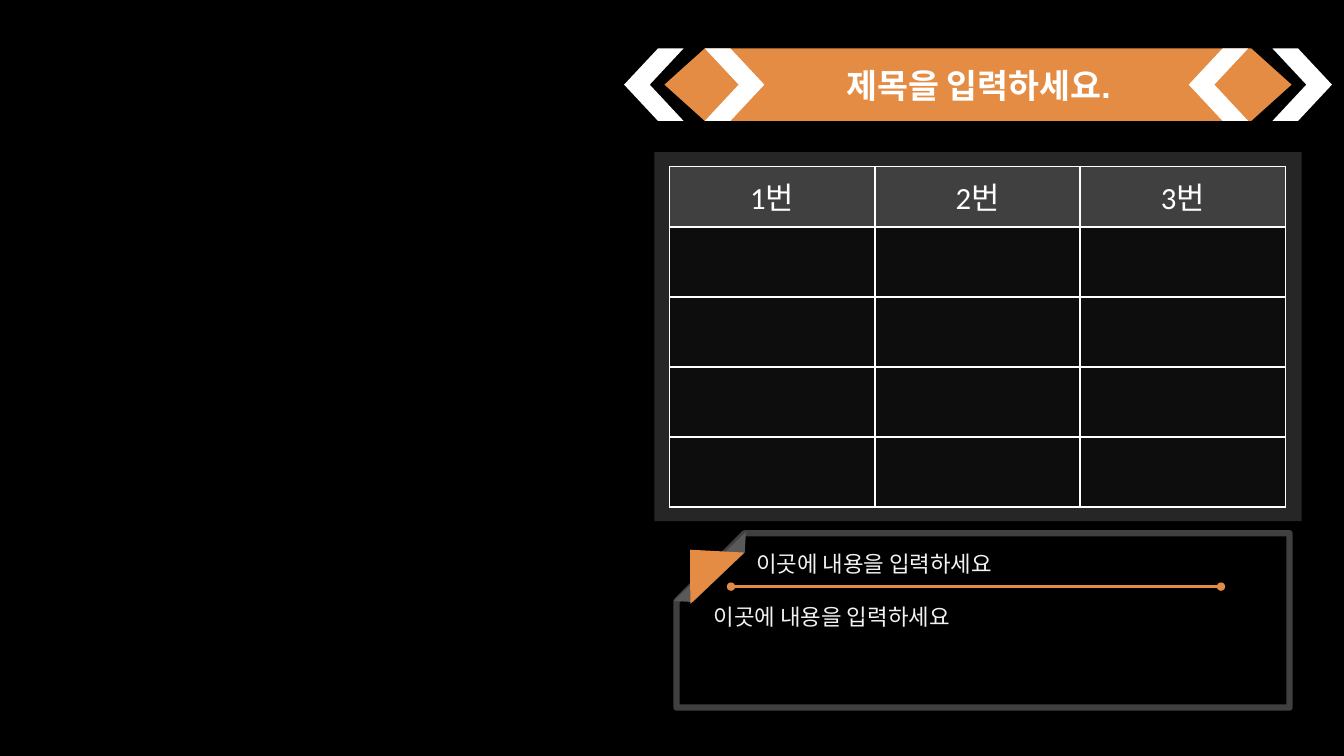
from lxml import etree
from pptx import Presentation
from pptx.dml.color import RGBColor
from pptx.enum import shapes, text
from pptx.oxml.ns import qn
from pptx.util import Inches, Pt

ORANGE, WHITE, BLACK, GRAY = "E48C44", "FFFFFF", "000000", "404040"
MS = shapes.MSO_SHAPE


def write(tf, words, size, color=WHITE, font="Calibri", bold=False, align=None):
    p = tf.paragraphs[0]
    p.alignment = align
    r = p.add_run()
    r.text = words
    r.font.size, r.font.name, r.font.bold = Pt(size), font, bold
    r.font.color.rgb = RGBColor.from_string(color)


def style(sp, fill=None, line=None, width=0):
    sp.shadow.inherit = False
    if fill:
        sp.fill.solid()
        sp.fill.fore_color.rgb = RGBColor.from_string(fill)
    else:
        sp.fill.background()
    if line:
        sp.line.color.rgb = RGBColor.from_string(line)
        sp.line.width = Pt(width)
    else:
        sp.line.fill.background()


prs = Presentation()
prs.slide_width, prs.slide_height = Inches(13.33), Inches(7.5)
s = prs.slides.add_slide(prs.slide_layouts[6])
s.background.fill.solid()
s.background.fill.fore_color.rgb = RGBColor.from_string(BLACK)

# Table on its panel
panel = s.shapes.add_shape(MS.RECTANGLE, Inches(6.49), Inches(1.51), Inches(6.42), Inches(3.66))
style(panel, "262626")

headings = ["1번", "2번", "3번"]
heights = [0.6] + [0.695] * 4
last_row, last_col = len(heights) - 1, len(headings) - 1
table = s.shapes.add_table(len(heights), len(headings), Inches(6.64), Inches(1.65),
                           Inches(6.11), Inches(3.38)).table
table.horz_banding = False
for col in table.columns:
    col.width = Inches(6.11 / len(headings))
for i, height in enumerate(heights):
    table.rows[i].height = Inches(height)
    for j, heading in enumerate(headings):
        cell = table.cell(i, j)
        tcPr = cell._tc.get_or_add_tcPr()
        outer = {"lnL": j == 0, "lnR": j == last_col, "lnT": i == 0, "lnB": i == last_row}
        for side, thin in outer.items():
            ln = etree.SubElement(tcPr, qn("a:" + side), w=str(Pt(1 if thin else 1.5)))
            fill = etree.SubElement(ln, qn("a:solidFill"))
            etree.SubElement(fill, qn("a:srgbClr"), val=WHITE)
        cell.fill.solid()
        cell.fill.fore_color.rgb = RGBColor.from_string("0D0D0D" if i else GRAY)
        cell.vertical_anchor = text.MSO_ANCHOR.MIDDLE
        if i == 0:
            write(cell.text_frame, heading, 22, align=text.PP_ALIGN.CENTER)

# Note box with a folded corner
frame = s.shapes.add_shape(MS.SNIP_1_RECTANGLE, Inches(6.71), Inches(5.29), Inches(6.08), Inches(1.73))
frame.adjustments[0] = 0.39
frame._element.spPr.xfrm.set("flipH", "1")
style(frame, line=GRAY, width=4.5)

fold = s.shapes.add_shape(MS.DIAGONAL_STRIPE, Inches(6.7), Inches(5.26), Inches(0.68), Inches(0.72))
fold.adjustments[0] = 0.72
fold.rotation = 182.9
style(fold, "595959")

flap = s.shapes.add_shape(MS.ISOSCELES_TRIANGLE, Inches(6.61), Inches(5.4), Inches(0.74), Inches(0.39))
flap.rotation = 316.5
style(flap, ORANGE)

for x, y in [(7.4, 5.41), (6.98, 5.93)]:
    note = s.shapes.add_textbox(Inches(x), Inches(y), Inches(5.25), Inches(0.37))
    note.text_frame.word_wrap = True
    write(note.text_frame, "이곳에 내용을 입력하세요", 16, "F2F2F2")

rule = s.shapes.add_connector(shapes.MSO_CONNECTOR.STRAIGHT, Inches(7.25), Inches(5.82),
                              Inches(12.11), Inches(5.82))
rule.line.color.rgb = RGBColor.from_string(ORANGE)
rule.line.width = Pt(1.75)
for end in ("headEnd", "tailEnd"):
    etree.SubElement(rule.line._get_or_add_ln(), qn("a:" + end), type="oval")
etree.SubElement(rule._element.spPr, qn("a:effectLst"))

# Title ribbon with chevrons
top, middle, bottom = 0.48, 0.84, 1.2
corners = [(6.99, top), (12.41, top), (12.81, middle), (12.41, bottom), (6.99, bottom), (6.59, middle)]
points = [(Inches(x), Inches(y)) for x, y in corners]
builder = s.shapes.build_freeform(*points[0])
builder.add_line_segments(points[1:])
style(builder.convert_to_shape(), ORANGE)

for x, points_left in [(11.79, True), (6.99, False), (6.19, True), (12.62, False)]:
    chevron = s.shapes.add_shape(MS.CHEVRON, Inches(x), Inches(top), Inches(0.59), Inches(bottom - top))
    chevron.adjustments[0] = 0.57
    if points_left:
        chevron._element.spPr.xfrm.set("flipH", "1")
    style(chevron, WHITE)

title = s.shapes.add_textbox(Inches(7.6), Inches(0.59), Inches(4.21), Inches(0.5))
title.text_frame.word_wrap = True
write(title.text_frame, "제목을 입력하세요.", 24, font="Arial", bold=True, align=text.PP_ALIGN.CENTER)

prs.save("out.pptx")
